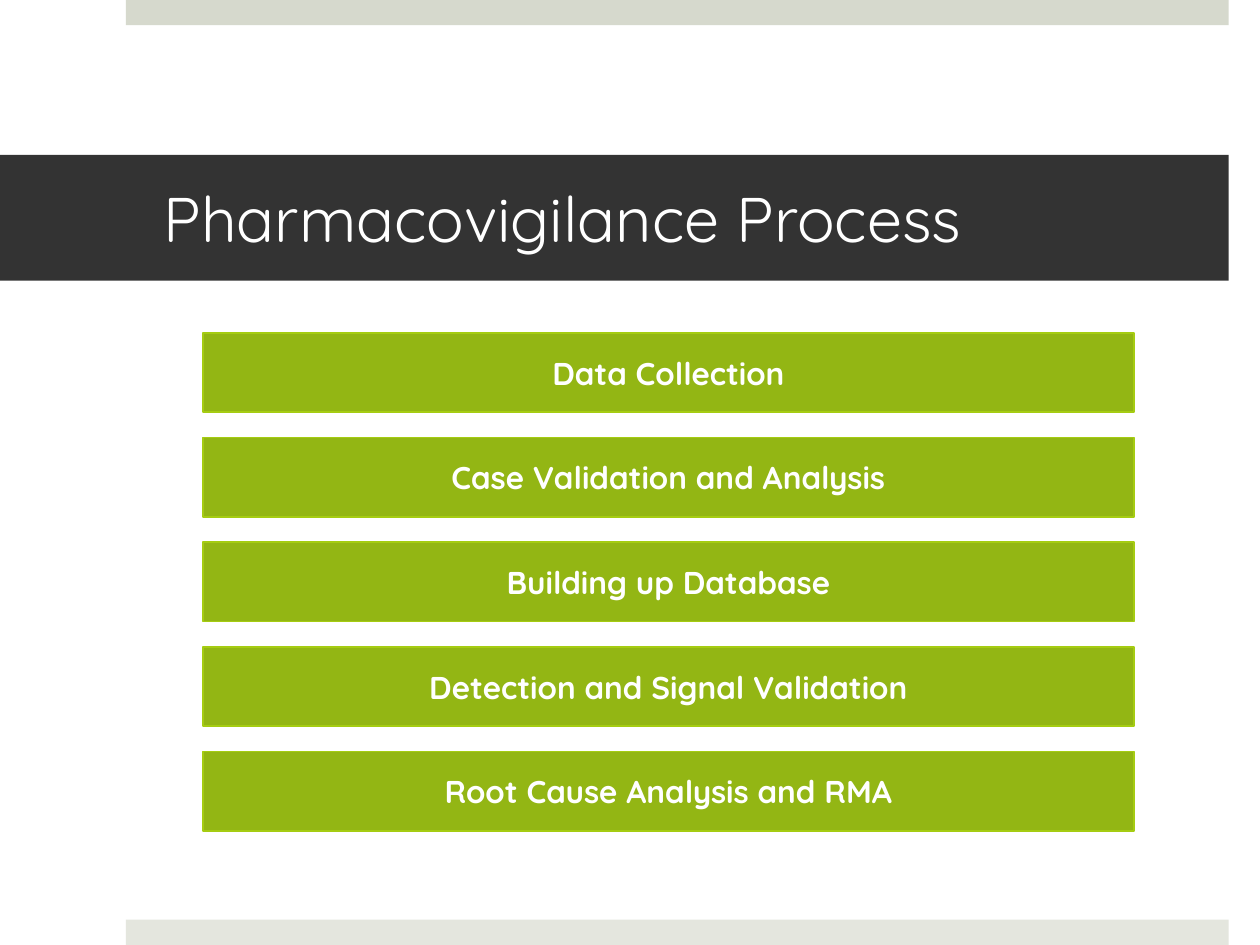
from pptx import Presentation
from pptx.dml.color import RGBColor
from pptx.enum import shapes, text
from pptx.util import Cm, Pt

COLORS = {
    "title band": "333333",
    "top bar": "D6D9CD",
    "bottom bar": "E4E6DE",
    "step": "93B614",
    "step edge": "A5CC12",
    "text": "FFFFFF",
}
FONT = "Quicksand"


def color(name):
    return RGBColor.from_string(COLORS[name])


def write(shape, wording, size, bold=False, align=text.PP_ALIGN.LEFT):
    frame = shape.text_frame
    frame.word_wrap = True
    frame.auto_size = text.MSO_AUTO_SIZE.NONE
    frame.vertical_anchor = text.MSO_ANCHOR.MIDDLE
    paragraph = frame.paragraphs[0]
    paragraph.alignment = align
    run = paragraph.add_run()
    run.text = wording
    run.font.name = FONT
    run.font.size = Pt(size)
    run.font.bold = bold
    run.font.color.rgb = color("text")


prs = Presentation()
prs.slide_width, prs.slide_height = Cm(25.4), Cm(19.05)
slide = prs.slides.add_slide(prs.slide_layouts[5])  # title only

# Title band
title = slide.shapes.title
title.left, title.top, title.width, title.height = Cm(0), Cm(3.12), Cm(24.77), Cm(2.54)
title.fill.solid()
title.fill.fore_color.rgb = color("title band")
write(title, "Pharmacovigilance Process", size=36)
title.text_frame.margin_left, title.text_frame.margin_right = Cm(3.3), Cm(0.76)
title.text_frame.margin_top = title.text_frame.margin_bottom = Cm(0.13)

# Bars at the top and bottom edges
for name, top in (("top bar", 0), ("bottom bar", 18.54)):
    bar = slide.shapes.add_shape(shapes.MSO_SHAPE.RECTANGLE, Cm(2.54), Cm(top), Cm(22.23), Cm(0.51))
    bar.shadow.inherit = False
    bar.fill.solid()
    bar.fill.fore_color.rgb = color(name)
    bar.line.fill.background()

# Process steps, evenly stacked
STEPS = [
    "Data Collection",
    "Case Validation and Analysis",
    "Building up Database",
    "Detection and Signal Validation",
    "Root Cause Analysis and RMA",
]
FIRST_TOP, PITCH = 6.71, 2.11
for i, wording in enumerate(STEPS):
    step = slide.shapes.add_shape(
        shapes.MSO_SHAPE.RECTANGLE, Cm(4.09), Cm(FIRST_TOP + i * PITCH), Cm(18.77), Cm(1.6))
    step.shadow.inherit = False
    step.fill.solid()
    step.fill.fore_color.rgb = color("step")
    step.line.color.rgb = color("step edge")
    step.line.width = Pt(1)
    write(step, wording, size=18, bold=True, align=text.PP_ALIGN.CENTER)

prs.save("out.pptx")
